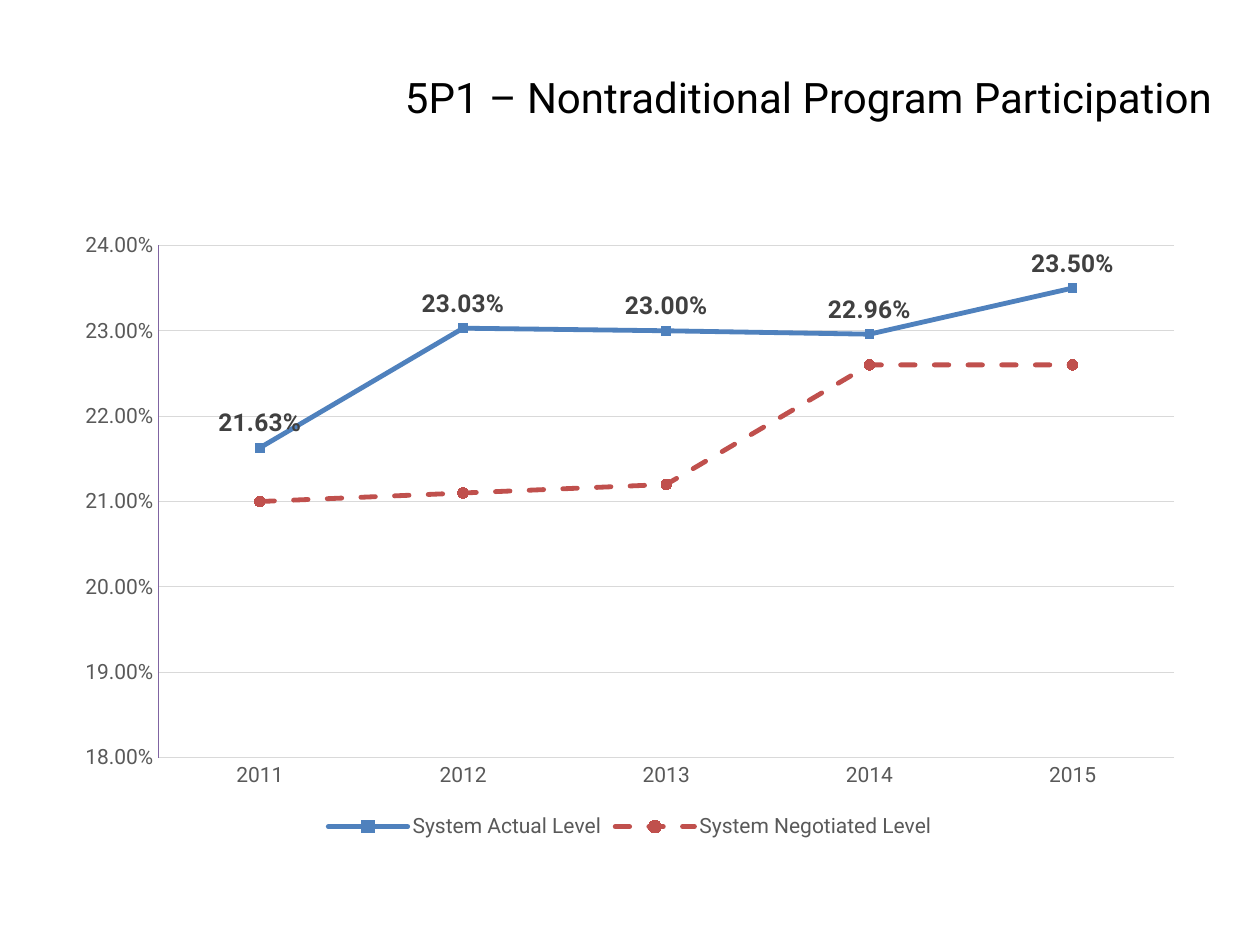
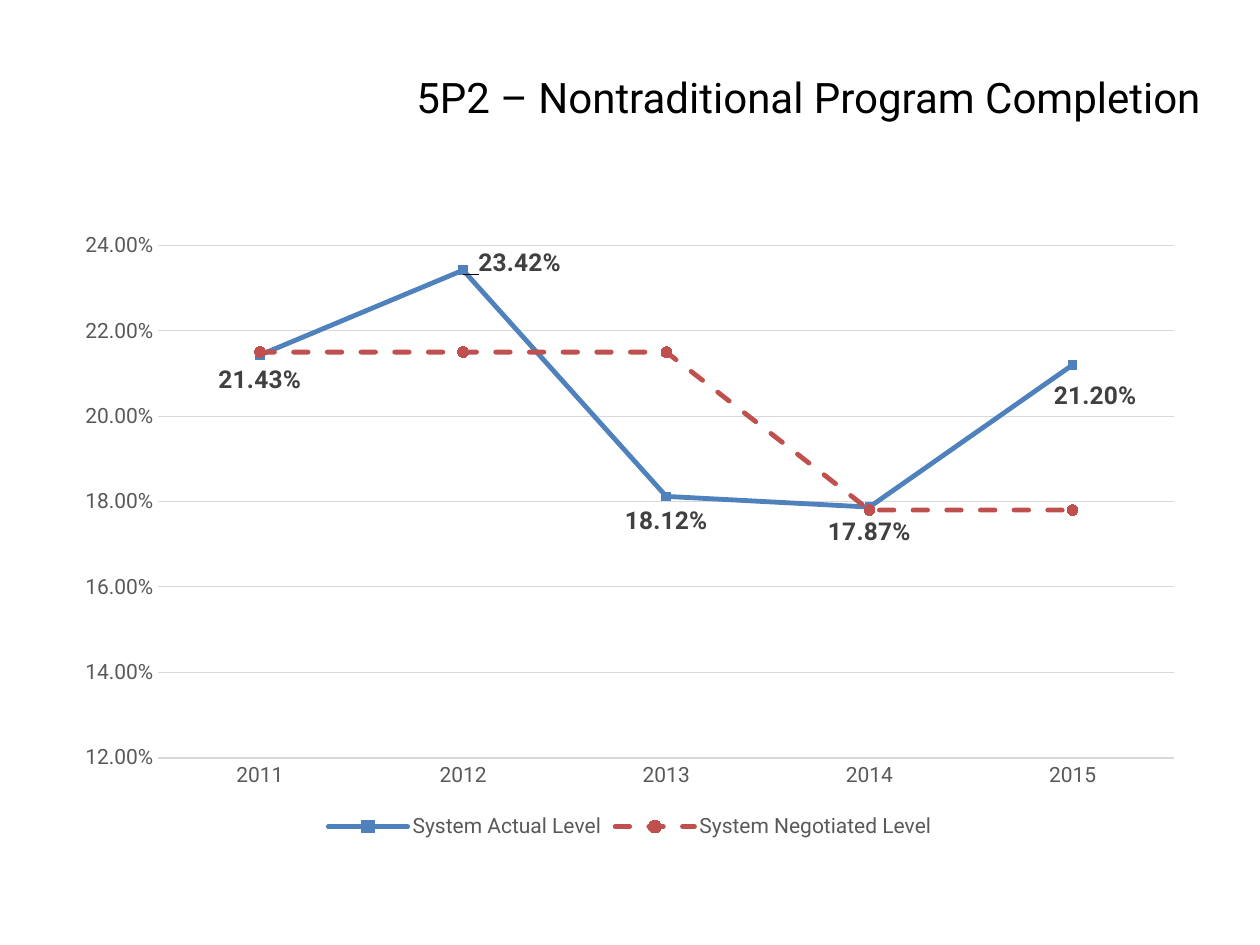
from pptx import Presentation
from pptx.chart.data import CategoryChartData
from pptx.dml.color import RGBColor
from pptx.enum.chart import XL_CHART_TYPE as ChartType
from pptx.enum.chart import XL_LABEL_POSITION as LabelPosition
from pptx.enum.chart import XL_LEGEND_POSITION as LegendPosition
from pptx.enum.chart import XL_MARKER_STYLE as MarkerStyle
from pptx.enum.chart import XL_TICK_MARK as TickMark
from pptx.enum.dml import MSO_LINE as LineStyle
from pptx.enum.text import MSO_ANCHOR as Anchor
from pptx.enum.text import PP_ALIGN as Align
from pptx.oxml import parse_xml
from pptx.oxml.ns import nsdecls, qn
from pptx.util import Pt

FONT = "Roboto"
BLACK, GRAY, LABEL_GRAY, GRID = "000000", "595959", "404040", "D9D9D9"
BLUE, RED, PURPLE = "4F81BD", "C0504D", "8064A2"
PERCENT = "0.00%"
YEARS = ["2011", "2012", "2013", "2014", "2015"]
CHART_WIDTH, CHART_HEIGHT = 648, 356.4
LAYOUT = f'<c:layout {nsdecls("c")}><c:manualLayout>{{}}</c:manualLayout></c:layout>'
PLOT_LAYOUT = LAYOUT.format(
    '<c:layoutTarget val="inner"/><c:xMode val="edge"/><c:yMode val="edge"/>'
    f'<c:x val="{54.5 / CHART_WIDTH}"/><c:y val="{14.25 / CHART_HEIGHT}"/>'
    f'<c:w val="{580.5 / CHART_WIDTH}"/><c:h val="{292.75 / CHART_HEIGHT}"/>'
)
NO_LEADER_LINES = (
    f'<c:extLst {nsdecls("c")}><c:ext uri="{{CE6537A1-D6FC-4f65-9D91-7224C49458BB}}" '
    'xmlns:c15="http://schemas.microsoft.com/office/drawing/2012/chart">'
    '<c15:showLeaderLines val="0"/></c:ext></c:extLst>'
)

SERIES_STYLES = [
    ("System Actual Level", BLUE, LineStyle.SOLID, MarkerStyle.SQUARE, 5),
    ("System Negotiated Level", RED, LineStyle.DASH, MarkerStyle.CIRCLE, 6),
]

MEASURES = [
    {
        "title": "5P1 – Nontraditional Program Participation",
        "values": [
            [0.2163, 0.2303, 0.23, 0.2296, 0.235],
            [0.21, 0.211, 0.212, 0.226, 0.226],
        ],
        "minimum": 0.18,
        "step": 0.01,
        "axis_color": PURPLE,
        "label_position": LabelPosition.ABOVE,
        "moved_labels": [],
    },
    {
        "title": "5P2 – Nontraditional Program Completion",
        "values": [
            [0.2143, 0.2342, 0.1812, 0.1787, 0.212],
            [0.215, 0.215, 0.215, 0.178, 0.178],
        ],
        "minimum": 0.12,
        "step": 0.02,
        "axis_color": None,
        "label_position": LabelPosition.BELOW,
        "moved_labels": [(1, 0.05, -0.05), (4, 0.02, 0.01)],
    },
]


def color(code):
    return RGBColor.from_string(code)


def write(text, frame, size, code, align):
    para = frame.paragraphs[0]
    para.alignment = align
    span = para.add_run()
    span.text = text
    span.font.name = FONT
    span.font.size = Pt(size)
    span.font.color.rgb = color(code)


deck = Presentation()
deck.slide_width, deck.slide_height = Pt(720), Pt(540)

for measure in MEASURES:
    page = deck.slides.add_slide(deck.slide_layouts[6])
    title_box = page.shapes.add_textbox(Pt(222), Pt(18), Pt(480), Pt(74))
    title_box.text_frame.word_wrap = True
    title_box.text_frame.vertical_anchor = Anchor.MIDDLE
    write(measure["title"], title_box.text_frame, size=24, code=BLACK, align=Align.CENTER)

    chart_data = CategoryChartData(number_format=PERCENT)
    chart_data.categories = YEARS
    for style, values in zip(SERIES_STYLES, measure["values"]):
        chart_data.add_series(style[0], values)
    chart = page.shapes.add_chart(
        ChartType.LINE_MARKERS, Pt(36), Pt(126), Pt(CHART_WIDTH), Pt(CHART_HEIGHT), chart_data
    ).chart
    chart.has_title = False
    chart.has_legend = True
    chart.legend.position = LegendPosition.BOTTOM
    chart.legend.include_in_layout = False

    plot_area = chart.element.find(".//" + qn("c:plotArea"))
    for automatic_layout in plot_area.findall(qn("c:layout")):
        plot_area.remove(automatic_layout)
    plot_area.insert(0, parse_xml(PLOT_LAYOUT))

    year_axis, level_axis = chart.category_axis, chart.value_axis
    for axis in (year_axis, level_axis):
        axis.major_tick_mark = axis.minor_tick_mark = TickMark.NONE
    year_axis.format.line.color.rgb = color(GRID)
    year_axis.format.line.width = Pt(1)
    level_axis.minimum_scale = measure["minimum"]
    level_axis.maximum_scale = 0.24
    level_axis.major_unit = measure["step"]
    level_axis.tick_labels.number_format = PERCENT
    level_axis.tick_labels.number_format_is_linked = False
    level_axis.major_gridlines.format.line.color.rgb = color(GRID)
    level_axis.major_gridlines.format.line.width = Pt(0.75)
    if measure["axis_color"]:
        level_axis.format.line.color.rgb = color(measure["axis_color"])
        level_axis.format.line.width = Pt(0.75)
    else:
        level_axis.format.line.fill.background()

    plot = chart.plots[0]
    plot.vary_by_categories = False
    for series, (name, code, dash, marker, marker_size) in zip(plot.series, SERIES_STYLES):
        series.smooth = False
        series.format.line.color.rgb = color(code)
        series.format.line.width = Pt(2.75)
        series.format.line.dash_style = dash
        series.marker.style = marker
        series.marker.size = marker_size
        series.marker.format.fill.solid()
        series.marker.format.fill.fore_color.rgb = color(code)
        series.marker.format.line.color.rgb = color(code)
    for series_node in plot_area.iter(qn("c:ser")):
        series_node.find(qn("c:spPr")).find(qn("a:ln")).set("cap", "rnd")

    actual = plot.series[0]
    labels = actual.data_labels
    labels.show_value = True
    labels.number_format = PERCENT
    labels.number_format_is_linked = False
    labels.position = measure["label_position"]
    label_fonts = [labels.font]
    for index, shift_x, shift_y in measure["moved_labels"]:
        label = actual.points[index].data_label
        label_fonts.append(label.font)
        label.position = measure["label_position"]
    for label_node, moved in zip(plot_area.iter(qn("c:dLbl")), measure["moved_labels"]):
        offset = f'<c:x val="{moved[1]}"/><c:y val="{moved[2]}"/>'
        label_node.insert(1, parse_xml(LAYOUT.format(offset)))
    plot_area.find(".//" + qn("c:dLbls")).append(parse_xml(NO_LEADER_LINES))

    font_styles = [(chart.font, 10, BLACK, False)]
    for part in (year_axis.tick_labels, level_axis.tick_labels, chart.legend):
        font_styles.append((part.font, 12, GRAY, False))
    for label_font in label_fonts:
        font_styles.append((label_font, 14, LABEL_GRAY, True))
    for font, size, code, bold in font_styles:
        font.name = FONT
        font.size = Pt(size)
        font.bold = bold
        font.color.rgb = color(code)

deck.save("out.pptx")
